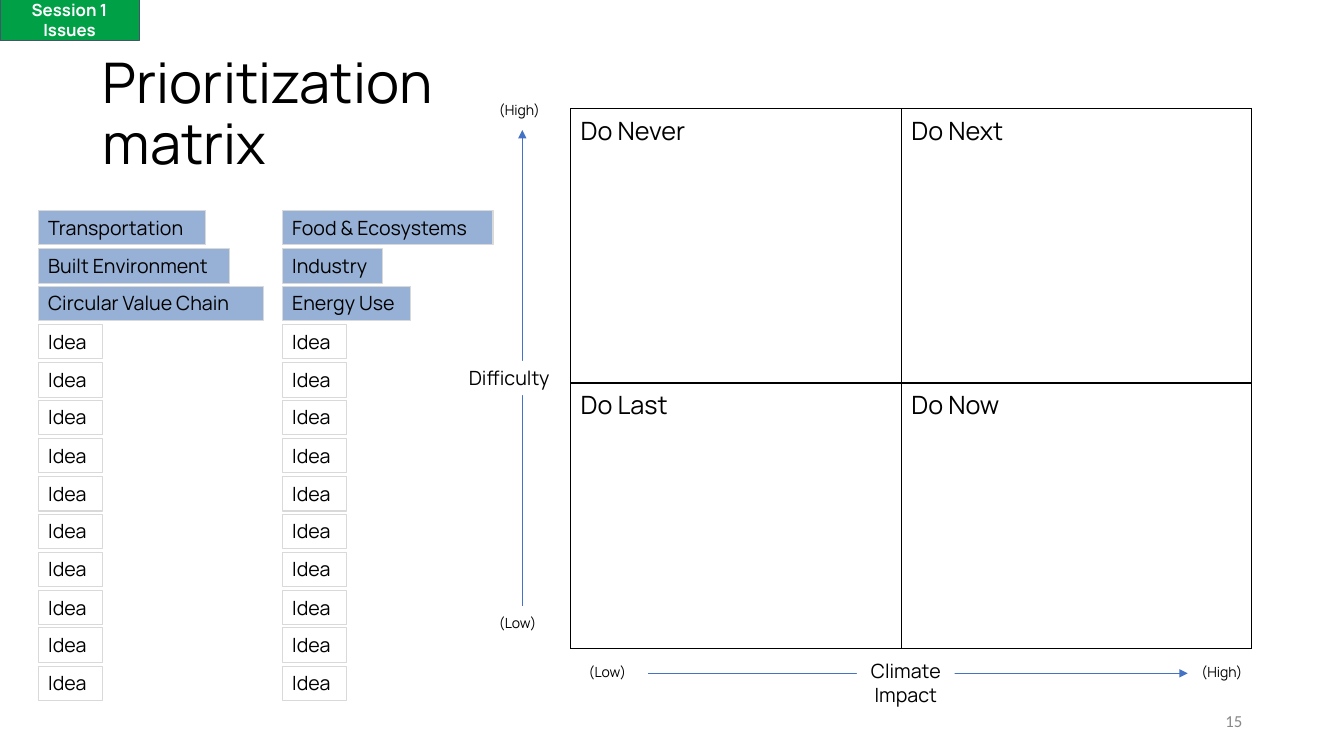
import pptx
import pptx.dml.color
import pptx.enum.shapes
import pptx.enum.text
import pptx.oxml
import pptx.oxml.ns
import pptx.util

PX = 9144
ALIGN = pptx.enum.text.PP_ALIGN
ANCHOR = pptx.enum.text.MSO_ANCHOR
BLACK, WHITE, BLUE = "000000", "FFFFFF", "4472C4"
NAMESPACE = pptx.oxml.ns.nsdecls("a")


def color(value):
    return pptx.dml.color.RGBColor.from_string(value)


def add_box(slide, bounds, lines, size=14, align=ALIGN.LEFT, fill=None, line=None,
            text_color=BLACK, bold=False, font="Manrope", anchor=ANCHOR.TOP, inset=5):
    bounds = [length * PX for length in bounds]
    if fill or line:
        shape = slide.shapes.add_shape(pptx.enum.shapes.MSO_SHAPE.RECTANGLE, *bounds)
        shape.shadow.inherit = False
        shape.fill.background()
        shape.line.fill.background()
    else:
        shape = slide.shapes.add_textbox(*bounds)
    if fill:
        shape.fill.solid()
        shape.fill.fore_color.rgb = color(fill)
    if line:
        shape.line.color.rgb = color(line)
        shape.line.width = pptx.util.Pt(0.75)
    frame = shape.text_frame
    frame_format = {"word_wrap": True, "vertical_anchor": anchor, "margin_left": 10 * PX,
                    "margin_right": 10 * PX, "margin_top": inset * PX,
                    "margin_bottom": inset * PX, "text": lines}
    for name, value in frame_format.items():
        setattr(frame, name, value)
    for paragraph in frame.paragraphs:
        paragraph.alignment = align
        for name, value in {"name": font, "size": pptx.util.Pt(size), "bold": bold}.items():
            setattr(paragraph.font, name, value)
        paragraph.font.color.rgb = color(text_color)
    return shape


presentation = pptx.Presentation()
presentation.slide_width = 1333 * PX
presentation.slide_height = 750 * PX
slide = presentation.slides.add_slide(presentation.slide_layouts[5])

title = slide.shapes.title
title_bounds = {"left": 92, "top": 50, "width": 430, "height": 175}
for name, value in title_bounds.items():
    setattr(title, name, value * PX)
title_format = {"text": "Prioritization matrix", "word_wrap": True,
                "vertical_anchor": ANCHOR.TOP, "auto_size": pptx.enum.text.MSO_AUTO_SIZE.NONE}
for name, value in title_format.items():
    setattr(title.text_frame, name, value)
heading = title.text_frame.paragraphs[0]
heading.alignment = ALIGN.LEFT
heading.line_spacing = 0.9
heading.font.name = "Manrope"
heading.font.size = pptx.util.Pt(40)
heading.font.color.rgb = color(BLACK)

quadrants = [["Do Never", "Do Next"], ["Do Last", "Do Now"]]
matrix = slide.shapes.add_table(2, 2, 566 * PX, 108 * PX, 675 * PX, 535 * PX).table
matrix.first_row = False
matrix.horz_banding = False
for column, width in zip(matrix.columns, [328, 347]):
    column.width = width * PX
for row, height in zip(matrix.rows, [272, 263]):
    row.height = height * PX
for row_index, names in enumerate(quadrants):
    for column_index, quadrant in enumerate(names):
        cell = matrix.cell(row_index, column_index)
        cell.text = quadrant
        font = cell.text_frame.paragraphs[0].runs[0].font
        font.name = "Manrope"
        font.size = pptx.util.Pt(18)
        font.color.rgb = color(BLACK)
        properties = cell._tc.get_or_add_tcPr()
        for side in ["lnL", "lnR", "lnT", "lnB"]:
            properties.append(pptx.oxml.parse_xml(
                f'<a:{side} {NAMESPACE} w="12700"><a:solidFill>'
                f'<a:srgbClr val="{BLACK}"/></a:solidFill></a:{side}>'))
        cell.fill.background()

add_box(slide, (942, 695, 300, 40), "15", size=12, align=ALIGN.RIGHT,
        text_color="888888", font="Calibri", anchor=ANCHOR.MIDDLE)
add_box(slide, (0, 0, 138, 40), "Session 1\nIssues", size=12, align=ALIGN.CENTER,
        fill="00A047", line="44546A", text_color=WHITE, bold=True,
        anchor=ANCHOR.MIDDLE, inset=10)

idea_count = 10
topic_columns = [
    (38, [("Transportation", 166), ("Built Environment", 190), ("Circular Value Chain", 223)]),
    (280, [("Food & Ecosystems", 209), ("Industry", 99), ("Energy Use", 127)]),
]
for left, topics in topic_columns:
    for index, (label, width) in enumerate(topics + [("Idea", 64)] * idea_count):
        top = 209 + round(index * 452 / 12)
        fill = "97B1D6" if index < len(topics) else None
        add_box(slide, (left, top, width, 34), label, fill=fill, line="D9D9D9")

add_box(slide, (485, 92, 89, 36), "(High)", size=10, inset=10)
add_box(slide, (1155, 650, 87, 36), "(High)", size=10, align=ALIGN.RIGHT, inset=10)
difficulty_low = add_box(slide, (485, 601, 66, 36), "(Low)", size=10, inset=10)
impact_low = add_box(slide, (574, 650, 69, 36), "(Low)", size=10, inset=10)

axes = [(difficulty_low, 0, (518, 601, 518, 129)), (impact_low, 3, (643, 668, 1178, 668))]
for low_label, site, points in axes:
    axis = slide.shapes.add_connector(
        pptx.enum.shapes.MSO_CONNECTOR.STRAIGHT, *[point * PX for point in points])
    axis.begin_connect(low_label, site)
    axis.line.color.rgb = color(BLUE)
    axis.line.width = pptx.util.Pt(0.75)
    axis.line._get_or_add_ln().append(
        pptx.oxml.parse_xml(f'<a:tailEnd {NAMESPACE} type="triangle"/>'))
    axis._element.spPr.append(pptx.oxml.parse_xml(f"<a:effectLst {NAMESPACE}/>"))

add_box(slide, (419, 358, 136, 34), "Difficulty", align=ALIGN.RIGHT, fill=WHITE)
add_box(slide, (850, 649, 97, 57), "Climate Impact", align=ALIGN.CENTER, fill=WHITE)

presentation.save("out.pptx")
